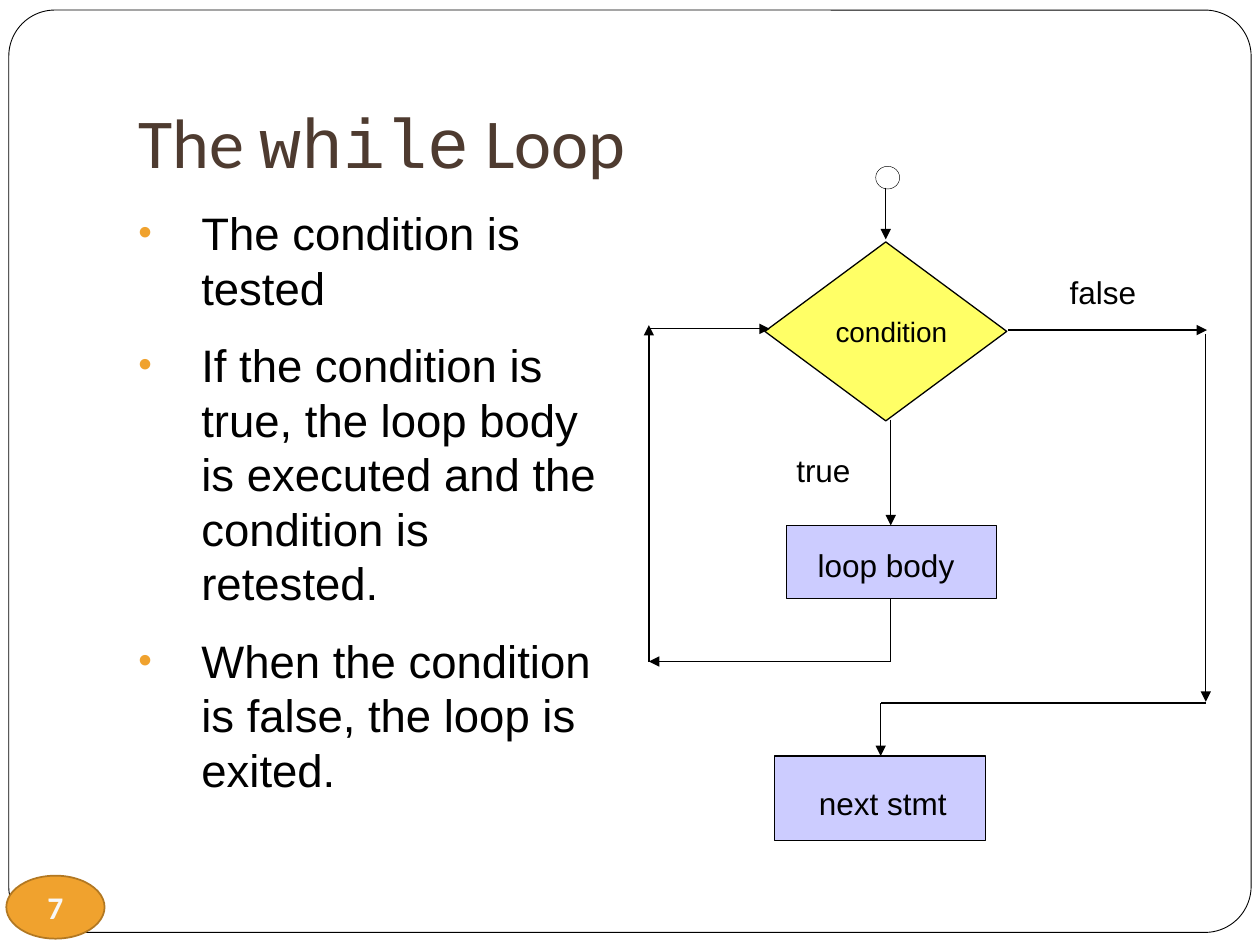
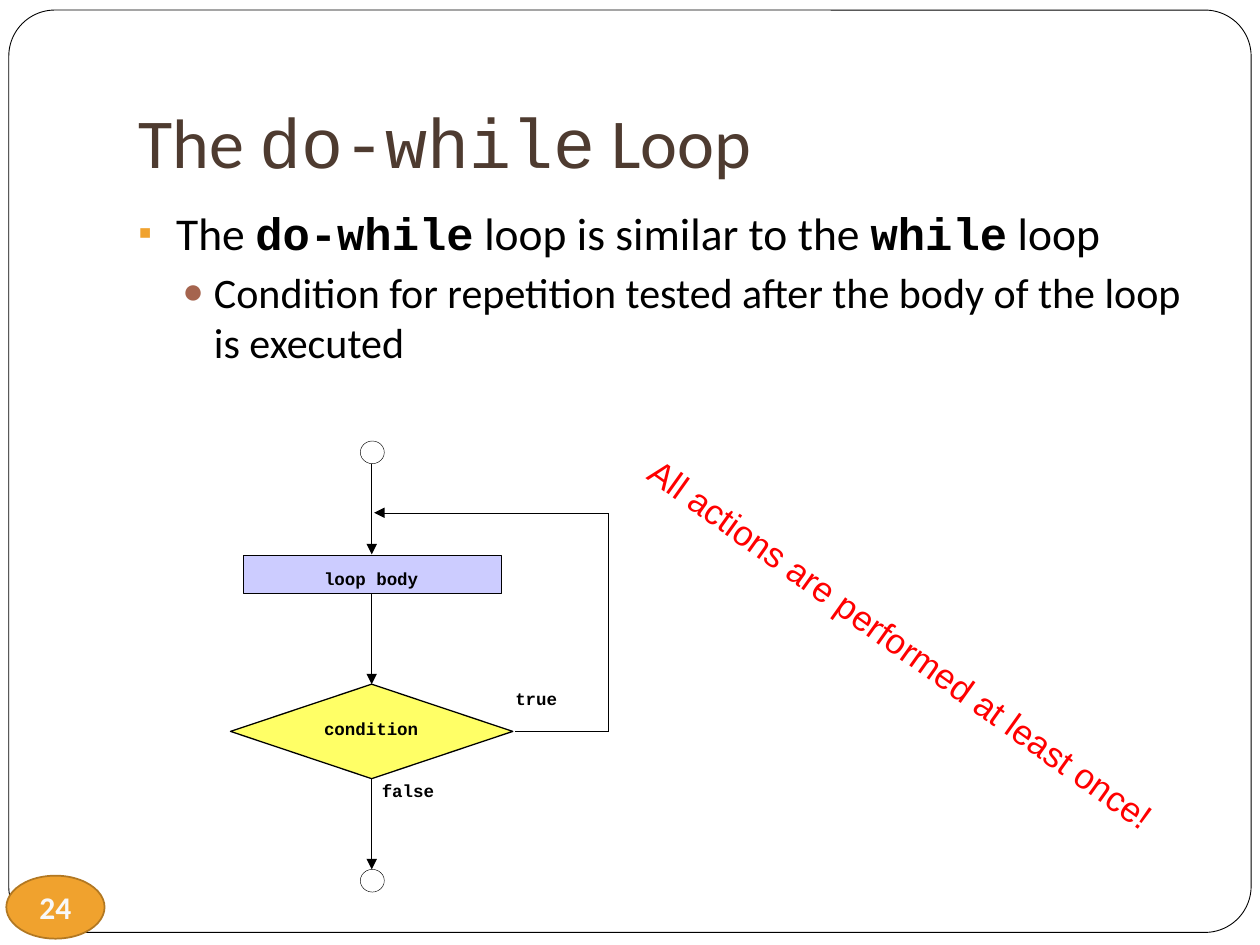
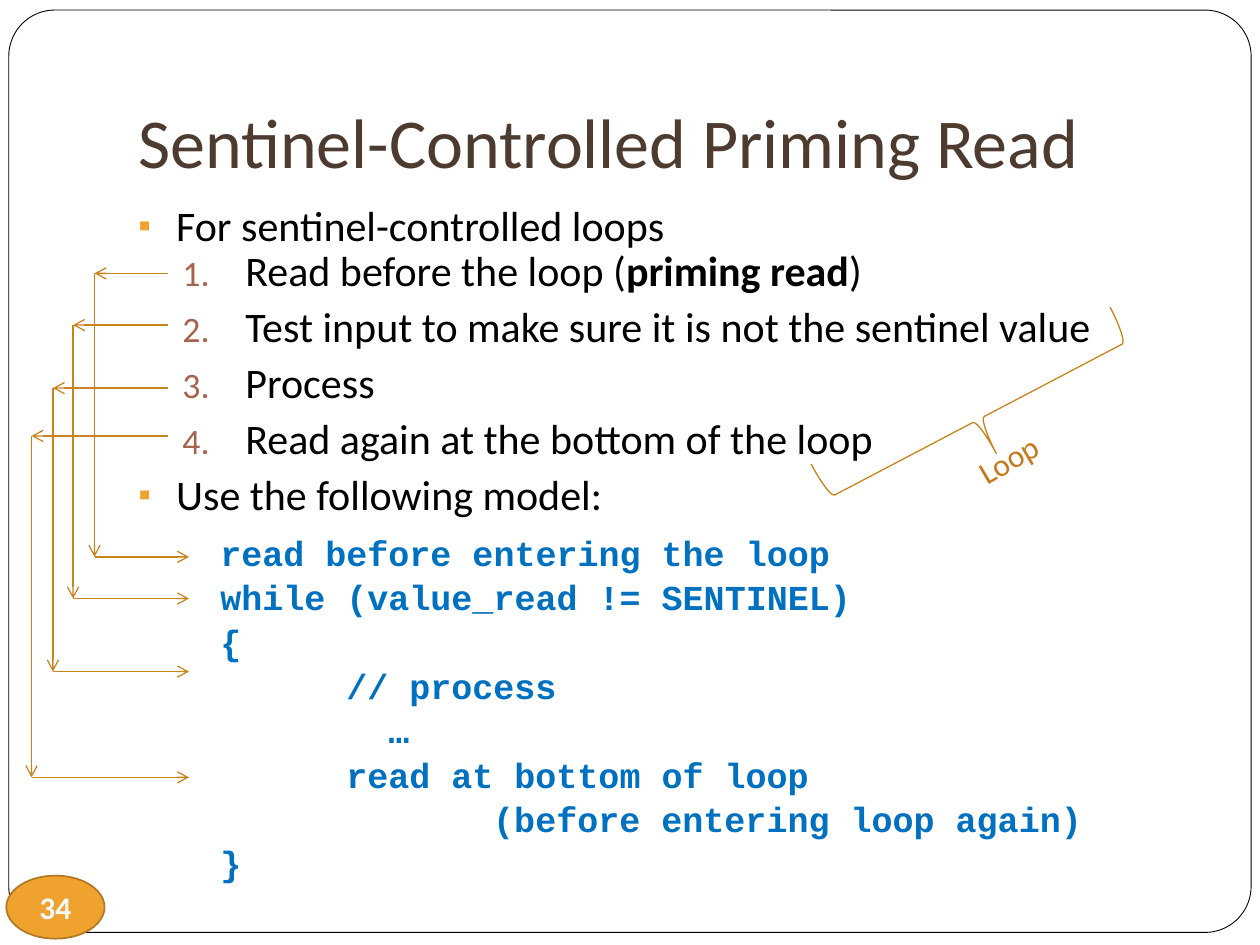
from dataclasses import dataclass
from itertools import pairwise

import pptx
import pptx.dml.color
import pptx.enum.shapes
import pptx.enum.text
import pptx.oxml.ns
import pptx.util
from lxml import etree

Inches = pptx.util.Inches
Pt = pptx.util.Pt
Shape = pptx.enum.shapes.MSO_SHAPE
Align = pptx.enum.text.PP_ALIGN
Anchor = pptx.enum.text.MSO_ANCHOR


@dataclass(frozen=True)
class Theme:
    black: str = "000000"
    white: str = "FFFFFF"
    title: str = "4E3B30"
    accent: str = "F0A22E"
    accent_edge: str = "B27822"
    number: str = "F8F8F8"
    sub_bullet: str = "A5644E"
    process: str = "CCCCFF"
    decision: str = "FFFF66"
    warning: str = "FF0000"
    code: str = "0070C0"
    guide: str = "C8831D"
    guide_text: str = "C7781B"
    body_font: str = "Calibri"
    sans_font: str = "Arial"
    mono_font: str = "Courier New"
    title_size: int = 40
    body_size: int = 26
    list_size: int = 24
    code_size: int = 20
    label_size: int = 18
    condition_size: int = 16
    small_size: int = 10
    thin: float = 0.25
    line: float = 0.75


THEME = Theme()
INSETS = (0.1, 0.05, 0.1, 0.05)
NO_INSETS = (0, 0, 0, 0)
CODE_LEFT = 0.65
CODE_CHARACTER = THEME.code_size * 0.6 / 72


def rgb(value):
    return pptx.dml.color.RGBColor.from_string(value)


def add_xml(parent, tag, **attributes):
    return etree.SubElement(parent, pptx.oxml.ns.qn(tag), attributes)


def set_font(font, size, color, name=THEME.body_font, bold=False):
    font.size = Pt(size)
    font.name = name
    font.bold = bold
    font.color.rgb = rgb(color)


def fill_paragraph(paragraph, runs, size, color, name=THEME.body_font, bold=False):
    """Write runs: plain strings, or (text, font name, bold) where a run differs."""
    set_font(paragraph.font, size, color, name, bold)
    for item in [runs] if isinstance(runs, str) else runs:
        run = paragraph.add_run()
        if isinstance(item, str):
            run.text = item
        else:
            run.text, run.font.name, run.font.bold = item


def set_indent(paragraph, left, hanging=0.0):
    properties = paragraph._p.get_or_add_pPr()
    properties.set("marL", str(Inches(left)))
    properties.set("indent", str(Inches(-hanging)))
    return properties


def set_bullet(paragraph, left, hanging, bullet, color):
    """Give a hanging bullet; "1." stands for automatic numbers."""
    properties = set_indent(paragraph, left, hanging)
    add_xml(add_xml(properties, "a:buClr"), "a:srgbClr", val=color)
    add_xml(properties, "a:buSzPct", val="85000")
    if bullet == "1.":
        add_xml(properties, "a:buAutoNum", type="arabicPeriod")
    else:
        add_xml(properties, "a:buFont", typeface="Arial")
        add_xml(properties, "a:buChar", char=bullet)


def set_spacing(paragraph, before=0, after=0, lines=1.0):
    paragraph.space_before = Pt(before)
    paragraph.space_after = Pt(after)
    paragraph.line_spacing = lines


def set_insets(frame, insets):
    (frame.margin_left, frame.margin_top,
     frame.margin_right, frame.margin_bottom) = map(Inches, insets)


def add_text_frame(slide, box, insets=INSETS, wrap=True, rotation=0):
    shape = slide.shapes.add_textbox(*map(Inches, box))
    shape.rotation = rotation
    frame = shape.text_frame
    frame.word_wrap = wrap
    set_insets(frame, insets)
    return frame


def add_label(slide, box, text, size, color=THEME.black, name=THEME.sans_font,
              bold=False, align=Align.LEFT, **frame_options):
    frame = add_text_frame(slide, box, **frame_options)
    paragraph = frame.paragraphs[0]
    paragraph.alignment = align
    fill_paragraph(paragraph, text, size, color, name, bold)


def add_preset(slide, kind, box, fill=None, line=THEME.black, weight=THEME.line):
    shape = slide.shapes.add_shape(kind, *map(Inches, box))
    shape.shadow.inherit = False
    if fill:
        shape.fill.solid()
        shape.fill.fore_color.rgb = rgb(fill)
    else:
        shape.fill.background()
    shape.line.color.rgb = rgb(line)
    shape.line.width = Pt(weight)
    return shape


def add_terminal(slide, left, top):
    add_preset(slide, Shape.OVAL, (left, top, 0.19, 0.18), weight=THEME.thin)


def add_route(slide, points, every_arrow=False, head="triangle",
              color=THEME.black, weight=THEME.line):
    """Join points with straight lines, with an arrowhead on every one or the last."""
    for index, (start, end) in enumerate(pairwise(points), 1):
        connector = slide.shapes.add_connector(
            pptx.enum.shapes.MSO_CONNECTOR.STRAIGHT, *map(Inches, start + end))
        connector.line.color.rgb = rgb(color)
        connector.line.width = Pt(weight)
        if every_arrow or index == len(points) - 1:
            add_xml(connector.line._get_or_add_ln(), "a:tailEnd", type=head)
        add_xml(connector._element.spPr, "a:effectLst")


def add_base_slide(presentation, number, title):
    slide = presentation.slides.add_slide(presentation.slide_layouts[6])
    frame = add_preset(slide, Shape.ROUNDED_RECTANGLE, (0.07, 0.08, 9.86, 7.32),
                       THEME.white, weight=0.5)
    frame.adjustments[0] = 0.05
    badge = add_preset(slide, Shape.OVAL, (0.05, 6.95, 0.78, 0.5),
                       THEME.accent, THEME.accent_edge, 1)
    set_insets(badge.text_frame, NO_INSETS)
    badge.text_frame.vertical_anchor = Anchor.MIDDLE
    paragraph = badge.text_frame.paragraphs[0]
    paragraph.alignment = Align.CENTER
    fill_paragraph(paragraph, str(number), THEME.label_size, THEME.number, bold=True)

    title_frame = add_text_frame(slide, (1, 0.3, 8.5, 1.25), (0.1, 0.05, 0.1, 0.1))
    title_frame.vertical_anchor = Anchor.BOTTOM
    fill_paragraph(title_frame.paragraphs[0], title, THEME.title_size, THEME.title)
    return slide


def add_body(slide, width, height):
    """Return a function that gives the next paragraph of a new body text."""
    frame = add_text_frame(slide, (1, 1.58, width, height))
    unused = [frame.paragraphs[0]]
    return lambda: unused.pop() if unused else frame.add_paragraph()


def build_while_slide(presentation):
    slide = add_base_slide(presentation, 7,
                           ["The ", ("while", THEME.mono_font, False), " Loop"])
    next_paragraph = add_body(slide, 4, 5)
    for text in (
        "The condition is tested",
        "If the condition is true, the loop body is executed and the condition is retested.",
        "When the condition is false, the loop is exited.",
    ):
        paragraph = next_paragraph()
        set_bullet(paragraph, 0.5, 0.5, "•", THEME.accent)
        set_spacing(paragraph, before=13)
        fill_paragraph(paragraph, text, THEME.body_size, THEME.black, THEME.sans_font)

    add_preset(slide, Shape.DIAMOND, (6.07, 1.92, 1.92, 1.42), THEME.decision)
    add_preset(slide, Shape.RECTANGLE, (6.24, 4.17, 1.67, 0.58), THEME.process)
    add_preset(slide, Shape.RECTANGLE, (6.15, 6, 1.67, 0.67), THEME.process)
    add_terminal(slide, 6.95, 1.32)

    add_label(slide, (6.49, 2.5, 1.17, 0.27), "condition", THEME.condition_size,
              align=Align.CENTER, insets=NO_INSETS)
    for text, box in (
        ("loop body", (6.49, 4.33, 1.33, 0.3)),
        ("false", (8.49, 2.17, 0.7, 0.3)),
        ("true", (6.32, 3.58, 0.6, 0.3)),
        ("next stmt", (6.5, 6.22, 1.2, 0.3)),
    ):
        add_label(slide, box, text, THEME.label_size, insets=NO_INSETS)

    add_route(slide, [(7.03, 1.49), (7.03, 1.9)])
    add_route(slide, [(7.07, 3.33), (7.07, 4.17)])
    add_route(slide, [(7.07, 4.75), (7.07, 5.25), (5.15, 5.25)])
    add_route(slide, [(5.15, 5.25), (5.15, 2.58)])
    add_route(slide, [(5.15, 2.61), (6.11, 2.61)])
    add_route(slide, [(8, 2.62), (9.58, 2.62)])
    add_route(slide, [(9.57, 2.65), (9.57, 5.57)])
    add_route(slide, [(9.57, 5.58), (6.99, 5.58), (6.99, 6)])


def build_do_while_slide(presentation):
    slide = add_base_slide(presentation, 24,
                           ["The ", ("do-while", THEME.mono_font, False), " Loop"])
    next_paragraph = add_body(slide, 8.5, 5)
    paragraph = next_paragraph()
    set_bullet(paragraph, 0.3, 0.3, "▪", THEME.accent)
    set_spacing(paragraph, before=5.8)
    fill_paragraph(
        paragraph,
        ["The ", ("do-while", THEME.mono_font, True), " loop is similar to the ",
         ("while", THEME.mono_font, True), " loop"],
        THEME.body_size, THEME.black)
    paragraph = next_paragraph()
    set_bullet(paragraph, 0.6, 0.25, "●", THEME.sub_bullet)
    set_spacing(paragraph, before=3.7)
    fill_paragraph(
        paragraph,
        "Condition for repetition tested after the body of the loop is executed",
        THEME.list_size, THEME.black)

    axis = 2.95
    for top in (3.5, 6.9):
        add_terminal(slide, axis - 0.09, top)
    for start, end in ((3.68, 4.4), (4.71, 5.43), (6.18, 6.9)):
        add_route(slide, [(axis, start), (axis, end)], weight=THEME.thin)
    add_route(slide, [(4.09, 5.8), (4.83, 5.8), (4.83, 4.07), (2.97, 4.07)],
              weight=THEME.thin)
    add_preset(slide, Shape.RECTANGLE, (1.93, 4.41, 2.05, 0.3), THEME.process)
    add_preset(slide, Shape.DIAMOND, (1.83, 5.43, 2.24, 0.75), THEME.decision)

    for text, box, align in (
        ("loop body", (2.2, 4.51, 1.49, 0.26), Align.CENTER),
        ("condition", (2.2, 5.7, 1.49, 0.27), Align.CENTER),
        ("true", (4.09, 5.46, 0.66, 0.36), Align.LEFT),
        ("false", (3.03, 6.19, 0.81, 0.36), Align.LEFT),
    ):
        add_label(slide, box, text, THEME.small_size, name=THEME.mono_font,
                  bold=True, align=align, insets=NO_INSETS)
    add_label(slide, (4.62, 4.89, 5.06, 0.44), "All actions are performed at least once!",
              THEME.code_size, THEME.warning, align=Align.CENTER,
              wrap=False, rotation=35.5)


def build_sentinel_slide(presentation):
    slide = add_base_slide(presentation, 34, "Sentinel-Controlled Priming Read")
    next_paragraph = add_body(slide, 8.5, 5.5)
    main_bullet = (0.3, 0.3, "▪", THEME.accent)
    step_bullet = (0.85, 0.5, "1.", THEME.sub_bullet)
    for runs, bullet, after in (
        ("For sentinel-controlled loops", main_bullet, 0),
        (["Read before the loop (", ("priming read", THEME.body_font, True), ")"],
         step_bullet, 6),
        ("Test input to make sure it is not the sentinel value", step_bullet, 6),
        ("Process", step_bullet, 6),
        ("Read again at the bottom of the loop", step_bullet, 6),
        ("Use the following model:", main_bullet, 6),
    ):
        paragraph = next_paragraph()
        set_bullet(paragraph, *bullet)
        set_spacing(paragraph, after=after, lines=0.9)
        fill_paragraph(paragraph, runs, THEME.list_size, THEME.black)
    for code, column in (
        ("read before entering the loop", 0),
        ("while (value_read != SENTINEL)", 0),
        ("{", 0),
        ("// process", 6),
        ("…", 8),
        ("read at bottom of loop", 6),
        ("(before entering loop again)", 13),
        ("}", 0),
    ):
        paragraph = next_paragraph()
        set_indent(paragraph, CODE_LEFT + column * CODE_CHARACTER)
        set_spacing(paragraph, before=3.7, lines=0.9)
        fill_paragraph(paragraph, code, THEME.code_size, THEME.code,
                       THEME.mono_font, True)

    for lane, step_y, code_y in (
        (0.75, 2.17, 4.42),
        (0.58, 2.58, 4.75),
        (0.42, 3.08, 5.33),
        (0.25, 3.46, 6.17),
    ):
        add_route(slide, [(1.33, step_y), (lane, step_y), (lane, code_y), (1.5, code_y)],
                  every_arrow=True, head="arrow", color=THEME.guide)
    brace = add_preset(slide, Shape.RIGHT_BRACE, (7.46, 1.99, 0.61, 2.68),
                       line=THEME.guide)
    brace.rotation = 62.3
    add_label(slide, (7.65, 3.44, 0.71, 0.4), "Loop", THEME.label_size,
              THEME.guide_text, THEME.body_font, wrap=False, rotation=329.6)


def main():
    presentation = pptx.Presentation()
    presentation.slide_width = Inches(10)
    presentation.slide_height = Inches(7.5)
    build_while_slide(presentation)
    build_do_while_slide(presentation)
    build_sentinel_slide(presentation)
    presentation.save("out.pptx")


if __name__ == "__main__":
    main()
